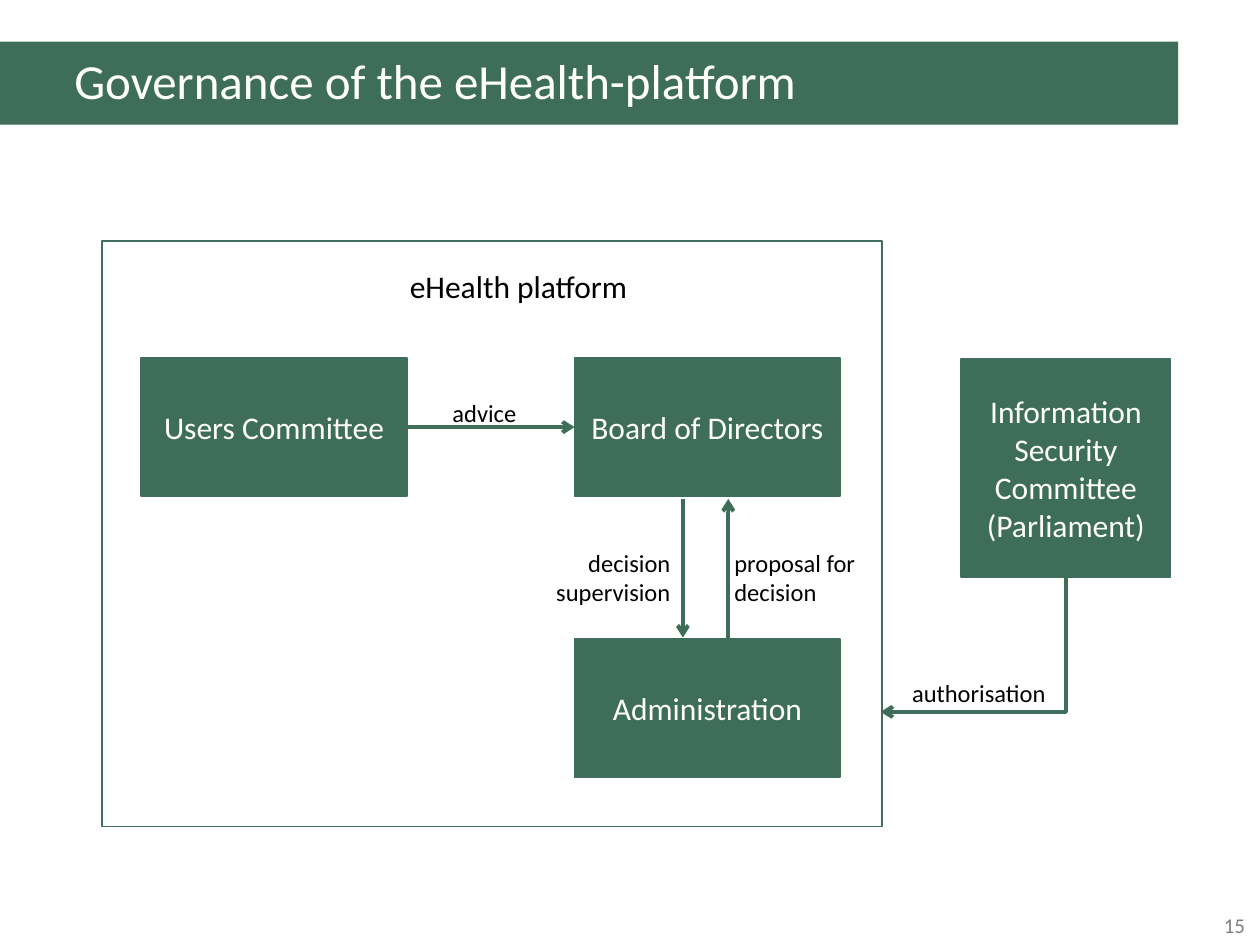
from pptx import Presentation
from pptx.dml.color import RGBColor
from pptx.enum.shapes import MSO_CONNECTOR as LINE, MSO_SHAPE as SHAPE
from pptx.enum.text import MSO_ANCHOR as ANCHOR, PP_ALIGN as ALIGN
from pptx.oxml.ns import qn
from pptx.util import Inches, Pt
from lxml.etree import SubElement

GREEN, WHITE, BLACK, GREY = "3E6E5A", "FFFFFF", "000000", "808080"
FONT = "Calibri"
COLUMNS, ROWS = 100, 75
prs = Presentation()
prs.slide_width, prs.slide_height = Inches(10), Inches(7.5)
COL, ROW = prs.slide_width / COLUMNS, prs.slide_height / ROWS


def rgb(value):
    """Return the colour for a hex string."""
    return RGBColor.from_string(value)


def inside(box, x, y, w=0, h=0):
    """Turn grid cells counted from a box's corner into slide lengths."""
    return (round((box[0] + x) * COL), round((box[1] + y) * ROW),
            round(w * COL), round(h * ROW))


def write(sp, text, size, color, align, anchor=ANCHOR.TOP):
    """Set and format the text of a shape."""
    tf = sp.text_frame
    tf.text = text
    tf.word_wrap = True
    tf.vertical_anchor = anchor
    for p in tf.paragraphs:
        p.alignment = align
        for r in p.runs:
            r.font.name, r.font.size = FONT, Pt(size)
            r.font.color.rgb = rgb(color)


def add_box(s, area, fill, text=""):
    """Add a rectangle with a green outline."""
    sp = s.shapes.add_shape(SHAPE.RECTANGLE, *area)
    sp.shadow.inherit = False
    sp.fill.solid()
    sp.fill.fore_color.rgb = rgb(fill)
    sp.line.color.rgb = rgb(GREEN)
    sp.line.width = Pt(1)
    if text:
        write(sp, text, 18, WHITE, ALIGN.CENTER, ANCHOR.MIDDLE)
    return sp


def add_label(s, area, text, size=14, align=ALIGN.CENTER, color=BLACK,
              anchor=ANCHOR.TOP, wrap=True):
    """Add a text box."""
    sp = s.shapes.add_textbox(*area)
    write(sp, text, size, color, align, anchor)
    sp.text_frame.word_wrap = wrap


def add_arrow(s, start, end, kind=LINE.STRAIGHT):
    """Add a green connector with an arrowhead at its end."""
    c = s.shapes.add_connector(kind, *start[:2], *end[:2])
    c.line.color.rgb = rgb(GREEN)
    c.line.width = Pt(2.25)
    SubElement(c.line._get_or_add_ln(), qn("a:tailEnd"), type="arrow")
    SubElement(c._element.spPr, qn("a:effectLst"))
    return c


def add_corner_arrow(s, source, end):
    """Lead an arrow down from a shape's bottom, then left to a point."""
    x, y = source.left + source.width // 2, source.top + source.height
    c = add_arrow(s, (x, y), end, LINE.ELBOW)
    c.begin_connect(source, 2)
    c.width, c.height = end[1] - y, x - end[0]
    c.left = (x + end[0] - c.width) // 2
    c.top = (y + end[1] - c.height) // 2
    xfrm = c._element.spPr.xfrm
    xfrm.flipH = xfrm.flipV = False
    xfrm.set("rot", "5400000")
    c._element.spPr.find(qn("a:prstGeom")).set("prst", "bentConnector2")


def place_title(s, box, text):
    """Format the title as a band that bleeds off the left edge."""
    sp = s.shapes.title
    sp.left, sp.top, sp.width, sp.height = inside(box, 0, 0, *box[2:])
    sp.fill.solid()
    sp.fill.fore_color.rgb = rgb(GREEN)
    write(sp, text, 28, WHITE, ALIGN.LEFT, ANCHOR.MIDDLE)
    tf = sp.text_frame
    tf.margin_left = round(14.2 * COL)
    tf.margin_top = tf.margin_bottom = round(1.5 * ROW)
    tf.paragraphs[0].line_spacing = 0.9


def place_platform(s, box):
    """Draw the platform's frame, bodies and their relations."""
    body_w, body_h = 21.1, 11
    left, right, upper, lower = 3.1, 37.5, 9.3, 31.6
    add_box(s, inside(box, 0, 0, *box[2:]), WHITE)
    users, board, _ = [
        add_box(s, inside(box, x, y, body_w, body_h), GREEN, name)
        for x, y, name in ((left, upper, "Users Committee"),
                           (right, upper, "Board of Directors"),
                           (right, lower, "Administration"))]
    advice = add_arrow(s, (0, 0), (0, 0))
    advice.begin_connect(users, 3)
    advice.end_connect(board, 1)
    top, bottom = upper + body_h + 0.2, lower - 0.1
    add_arrow(s, inside(box, 46.1, top), inside(box, 46.1, bottom))
    add_arrow(s, inside(box, 49.7, bottom), inside(box, 49.7, top))
    add_label(s, inside(box, 23.7, 12, 13.3, 3.4), "advice")
    add_label(s, inside(box, 34.9, 23.9, 11.2, 5.7),
              "decision\nsupervision", align=ALIGN.RIGHT, wrap=False)
    add_label(s, inside(box, 49.2, 23.9, 11.7, 5.7),
              "proposal for\ndecision", align=ALIGN.LEFT, wrap=False)
    add_label(s, inside(box, 4.3, 1.6, 57.5, 4), "eHealth platform", 18)


def place_parliament(s, box):
    """Draw the outside committee and its authorisation arrow."""
    committee = add_box(s, inside(box, 6.4, 0, 16.6, 17.3), GREEN,
                        "Information Security Committee\n(Parliament)")
    add_corner_arrow(s, committee, inside(box, 0, box[3]))
    add_label(s, inside(box, 1.5, 24.8, 13.2, 3.4), "authorisation",
              align=ALIGN.LEFT, wrap=False)


def place_number(s, box, number):
    """Write the slide number."""
    add_label(s, inside(box, 0, 0, *box[2:]), number, 12, ALIGN.RIGHT,
              GREY, ANCHOR.MIDDLE)


def main():
    """Build and save the slide."""
    s = prs.slides.add_slide(prs.slide_layouts[5])
    place_title(s, (-8.3, 3.3, 101.8, 6.6),
                "Governance of the eHealth-platform")
    place_platform(s, (8.1, 19.1, 61.9, 46.5))
    place_parliament(s, (69.9, 28.5, 23, 28))
    place_number(s, (75.4, 71.2, 24.4, 4.4), "15")
    prs.save("out.pptx")


if __name__ == "__main__":
    main()
